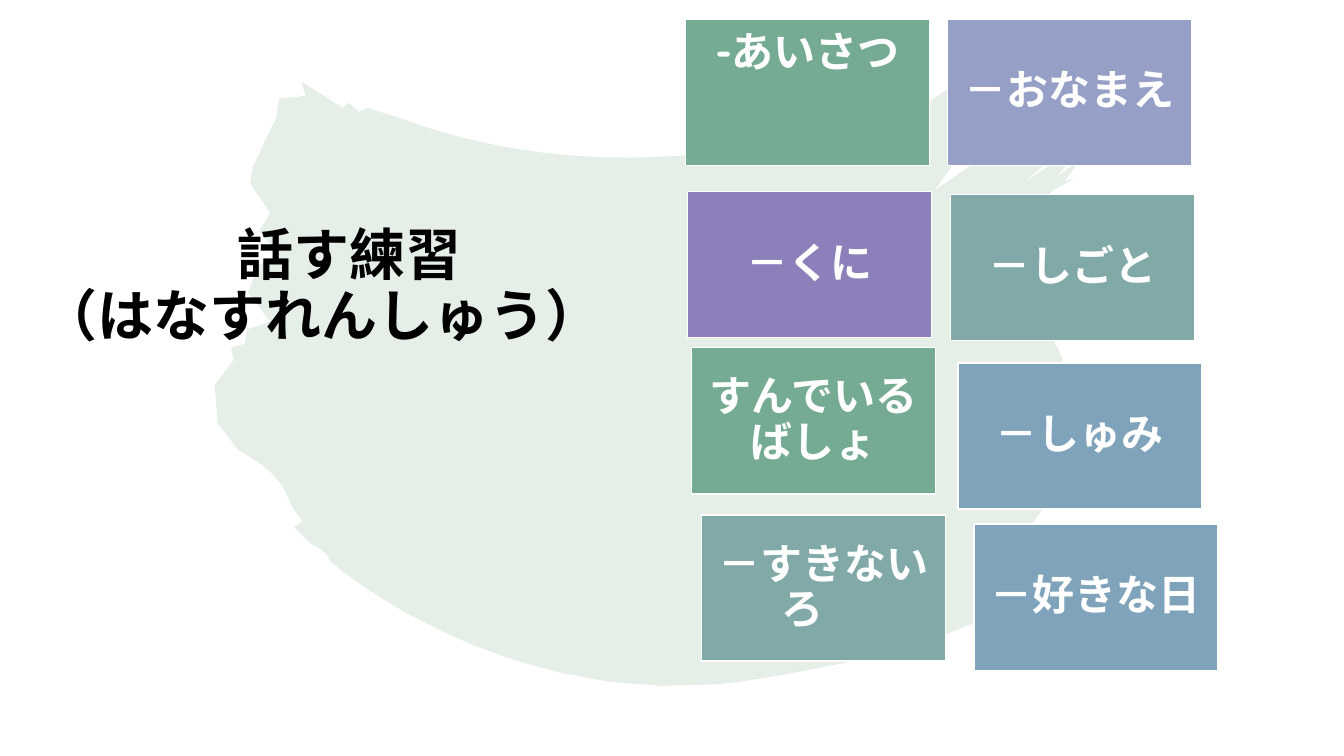
from dataclasses import dataclass

from lxml import etree
from pptx import Presentation
from pptx.dml.color import RGBColor
from pptx.enum.shapes import MSO_SHAPE
from pptx.enum.text import MSO_ANCHOR, PP_ALIGN
from pptx.oxml.ns import qn
from pptx.util import Inches, Pt

RECT = MSO_SHAPE.RECTANGLE
TOP, MIDDLE = MSO_ANCHOR.TOP, MSO_ANCHOR.MIDDLE
CENTER = PP_ALIGN.CENTER


@dataclass(frozen=True)
class Theme:
    """Fonts, type sizes and colours of the slide."""
    font: str = "Quicksand"
    title_size: int = 40
    card_size: int = 30
    black: str = "000000"
    white: str = "FFFFFF"
    brush: str = "81AC87"
    green: str = "75AB93"
    teal: str = "80A9A8"
    blue: str = "7FA3BA"
    lilac: str = "96A0C6"
    purple: str = "8C7FBA"


THEME = Theme()
CARD_W, CARD_H = 2.42, 1.45

CARDS = [
    ("-あいさつ", 6.8, 0.19, THEME.green, TOP),
    ("－おなまえ", 9.4, 0.19, THEME.lilac, MIDDLE),
    ("－くに", 6.82, 1.9, THEME.purple, MIDDLE),
    ("－しごと", 9.43, 1.93, THEME.teal, MIDDLE),
    ("すんでいるばしょ", 6.86, 3.45, THEME.green, MIDDLE),
    ("－しゅみ", 9.5, 3.6, THEME.blue, MIDDLE),
    ("－すきないろ　", 6.96, 5.11, THEME.teal, MIDDLE),
    ("－好きな日", 9.66, 5.2, THEME.blue, MIDDLE),
]

BRUSH = [
    (4.02, 1.19), (4.08, 1.21, 5.16, 1.65, 6.65, 1.55), (7.88, 1.48),
    (8.99, 1.17), (9.63, 0.72), (9.82, 1.11), (9.27, 1.89), (10.2, 1.25),
    (10.49, 1.52), (10.17, 1.8), (10.8, 1.39), (10.47, 1.76), (10.7, 1.6),
    (10.56, 1.8), (10.66, 1.77), (10.44, 1.89), (10, 2.42), (10.54, 3.56),
    (10.45, 4.79), (10.32, 5.08), (10.12, 5.36), (9.66, 6.18), (9.09, 6.41),
    (8.9, 6.48, 7.47, 6.77, 7.1, 6.79), (4.88, 6.97, 3.28, 5.58, 3.27, 5.56),
    (3.24, 5.47, 3.15, 5.43, 3.08, 5.39), (2.92, 5.23), (3, 5.17), (2.89, 5.02),
    (2.83, 4.82, 2.7, 4.67, 2.52, 4.56), (2.36, 4.46), (2.16, 4.2),
    (2.13, 3.82), (2.32, 3.57), (2.29, 3.45), (2.43, 3.41), (2.45, 3.27),
    (2.68, 3.19), (2.46, 2.9), (2.57, 2.63), (2.77, 2.51), (2.57, 2.3),
    (2.68, 2.11), (2.48, 1.82), (2.51, 1.65), (2.74, 1.17), (2.77, 0.98),
    (3.03, 0.95), (2.99, 0.81), (3.4, 1.07), (3.46, 1.02), (3.56, 1.11),
    (3.65, 1.07),
]


def flatten(outline, steps=12):
    """Turn points and cubic curves into a list of points in EMU."""
    pts = []
    for seg in outline:
        if len(seg) == 2:
            pts.append(seg)
            continue
        ctrl = [pts[-1], seg[:2], seg[2:4], seg[4:]]
        for i in range(1, steps + 1):
            t = i / steps
            weights = ((1 - t) ** 3, 3 * t * (1 - t) ** 2, 3 * t * t * (1 - t), t ** 3)
            pts.append(tuple(sum(w * c[axis] for w, c in zip(weights, ctrl))
                             for axis in (0, 1)))
    return [(Inches(x), Inches(y)) for x, y in pts]


def write(tf, text, size, color, anchor=MIDDLE, inset=(0.1, 0.05)):
    """Fill a text frame with one bold, centred paragraph."""
    tf.word_wrap = True
    tf.vertical_anchor = anchor
    tf.margin_left = tf.margin_right = Inches(inset[0])
    tf.margin_top = tf.margin_bottom = Inches(inset[1])
    p = tf.paragraphs[0]
    p.text = text
    p.alignment = CENTER
    p.line_spacing = 0.9
    for r in p.runs:
        r.font.name = THEME.font
        r.font.size = Pt(size)
        r.font.bold = True
        r.font.color.rgb = RGBColor.from_string(color)


class SlideBuilder:
    """Draws the elements of one slide in a given theme."""

    def __init__(self, slide, theme):
        """Keep the slide and its theme."""
        self.s = slide
        self.theme = theme

    def brush(self, outline, opacity):
        """Draw the translucent brush stroke."""
        start, *rest = flatten(outline)
        builder = self.s.shapes.build_freeform(*start, scale=1.0)
        builder.add_line_segments(rest)
        sp = builder.convert_to_shape()
        sp.shadow.inherit = False
        sp.line.fill.background()
        sp.fill.solid()
        sp.fill.fore_color.rgb = RGBColor.from_string(self.theme.brush)
        color = sp.element.spPr.find(qn("a:solidFill")).find(qn("a:srgbClr"))
        etree.SubElement(color, qn("a:alpha"), val=str(opacity * 1000))

    def title(self, text, x, y, w, h):
        """Add the slide heading."""
        sp = self.s.shapes.add_textbox(Inches(x), Inches(y), Inches(w), Inches(h))
        write(sp.text_frame, text, self.theme.title_size, self.theme.black)

    def card(self, text, x, y, fill, anchor):
        """Add one coloured topic card."""
        sp = self.s.shapes.add_shape(RECT, Inches(x), Inches(y),
                                     Inches(CARD_W), Inches(CARD_H))
        sp.shadow.inherit = False
        sp.fill.solid()
        sp.fill.fore_color.rgb = RGBColor.from_string(fill)
        sp.line.color.rgb = RGBColor.from_string(self.theme.white)
        sp.line.width = Pt(1)
        write(sp.text_frame, text, self.theme.card_size, self.theme.white,
              anchor=anchor, inset=(0.12, 0.12))


def main():
    """Build and save the slide."""
    prs = Presentation()
    prs.slide_width, prs.slide_height = Inches(13.33), Inches(7.5)
    page = SlideBuilder(prs.slides.add_slide(prs.slide_layouts[6]), THEME)
    page.brush(BRUSH, opacity=20)
    page.title("　話す練習\v（はなすれんしゅう）", 0, 0.18, 6.38, 5.35)
    for card in CARDS:
        page.card(*card)
    prs.save("out.pptx")


if __name__ == "__main__":
    main()
